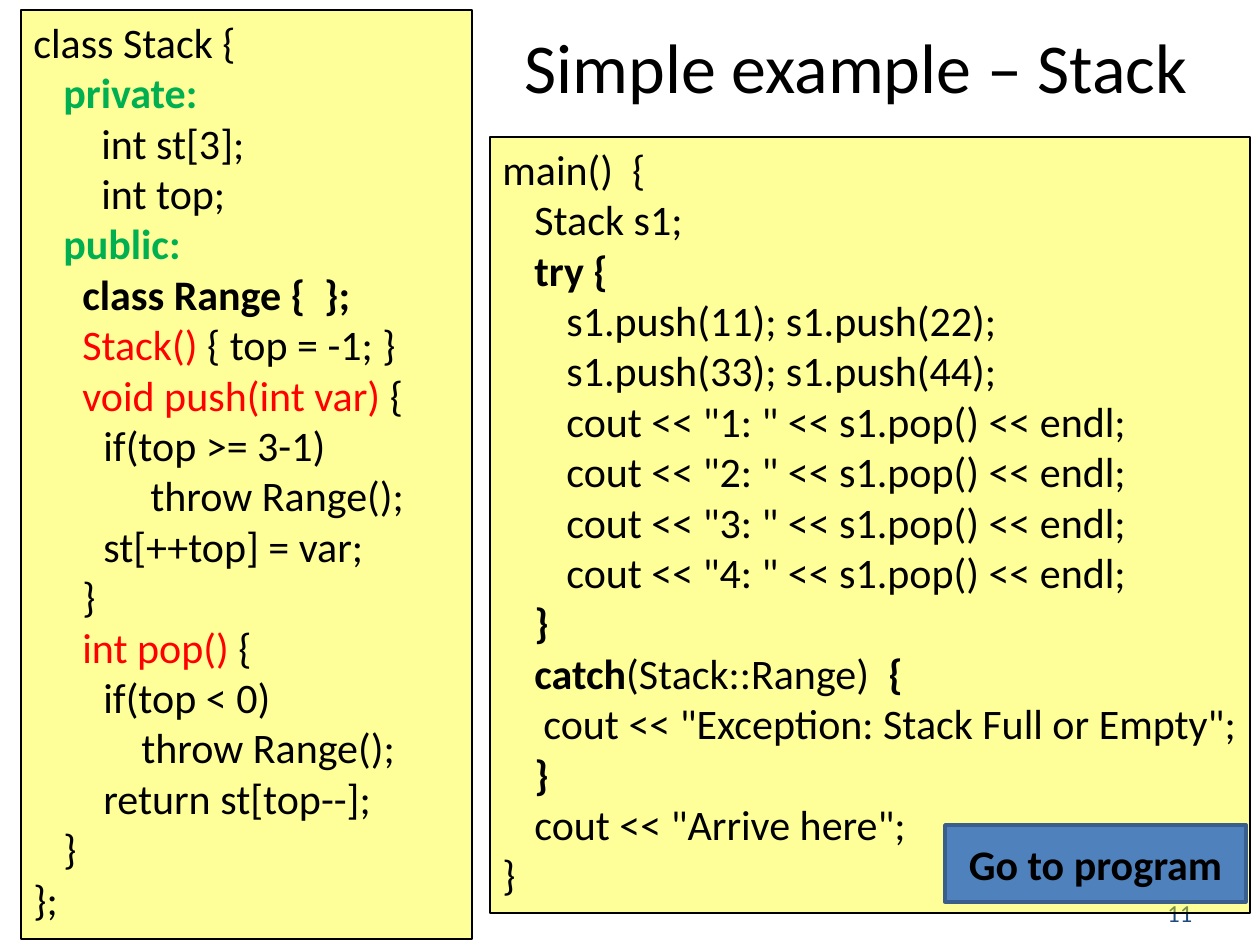
from dataclasses import dataclass

from lxml.etree import SubElement
from pptx import Presentation
from pptx.dml.color import RGBColor
from pptx.enum.shapes import MSO_SHAPE as Shape
from pptx.enum.text import MSO_ANCHOR as Anchor, MSO_AUTO_SIZE as AutoSize, PP_ALIGN as Align
from pptx.oxml.ns import qn
from pptx.util import Emu, Pt

PX_PER_INCH = 126


def px(n: int) -> Emu:
    return Emu(round(n * 914400 / PX_PER_INCH))


@dataclass(frozen=True)
class Theme:
    font: str = "Calibri"
    ink: str = "000000"
    access: str = "00B050"
    method: str = "FF0000"
    number: str = "1F497D"
    code_fill: str = "FFFF00"
    code_opacity: int = 40
    button_fill: str = "4F81BD"
    button_line: str = "3A5F8C"
    title_pt: int = 40
    body_pt: int = 24
    number_pt: int = 14


THEME = Theme()


@dataclass(frozen=True)
class Box:
    left: int
    top: int
    width: int
    height: int

    def emu(self) -> tuple:
        return px(self.left), px(self.top), px(self.width), px(self.height)


@dataclass(frozen=True)
class Run:
    text: str
    color: str = THEME.ink
    bold: bool = False


@dataclass(frozen=True)
class Line:
    indent: int
    runs: tuple


def line(indent: int, *runs) -> Line:
    """Make a line of code; a bare string is a plain run."""
    return Line(indent, tuple(Run(r) if isinstance(r, str) else r for r in runs))


def bold(text: str) -> Run:
    return Run(text, bold=True)


def access(text: str) -> Run:
    return Run(text, THEME.access, True)


def method(text: str) -> Run:
    return Run(text, THEME.method)


STACK_CLASS = (
    line(0, "class Stack {"),
    line(30, access("private:")),
    line(68, "int st[3];"),
    line(68, "int top;"),
    line(30, access("public:")),
    line(49, bold("class Range {  };")),
    line(49, method("Stack() "), "{ top = -1; }"),
    line(49, method("void push(int var)"), " {"),
    line(70, "if(top >= 3-1)"),
    line(117, "throw Range();"),
    line(70, "st[++top] = var;"),
    line(49, "}"),
    line(49, method("int pop() "), "{"),
    line(70, "if(top < 0)"),
    line(108, "throw Range();"),
    line(70, "return st[top--];"),
    line(30, "}"),
    line(0, "};"),
)

MAIN_PROGRAM = (
    line(0, "main()  {"),
    line(32, "Stack s1;"),
    line(32, bold("try {")),
    line(64, "s1.push(11); s1.push(22);"),
    line(64, "s1.push(33); s1.push(44);"),
    *(line(64, f'cout << "{n}: " << s1.pop() << endl;') for n in range(1, 5)),
    line(32, bold("}")),
    line(32, bold("catch"), "(Stack::Range)  ", bold("{")),
    line(41, 'cout << "Exception: Stack Full or Empty";'),
    line(32, bold("}")),
    line(32, 'cout << "Arrive here";'),
    line(0, "}"),
)


def write(sp, lines: tuple, size: int, align=Align.LEFT, anchor=Anchor.MIDDLE) -> None:
    tf = sp.text_frame
    tf.word_wrap = True
    tf.vertical_anchor = anchor
    for i, item in enumerate(lines):
        p = tf.add_paragraph() if i else tf.paragraphs[0]
        p.alignment = align
        if item.indent:
            p._p.get_or_add_pPr().set("marL", str(px(item.indent)))
        for run in item.runs:
            r = p.add_run()
            r.text = run.text
            r.font.name = THEME.font
            r.font.size = Pt(size)
            r.font.bold = run.bold
            r.font.color.rgb = RGBColor.from_string(run.color)


def add_label(slide, box: Box, run: Run, size: int, align=Align.LEFT) -> None:
    write(slide.shapes.add_textbox(*box.emu()), (line(0, run),), size, align)


def add_panel(slide, box: Box, fill: str, outline: str, width: float):
    sp = slide.shapes.add_shape(Shape.RECTANGLE, *box.emu())
    sp.shadow.inherit = False
    sp.fill.solid()
    sp.fill.fore_color.rgb = RGBColor.from_string(fill)
    sp.line.color.rgb = RGBColor.from_string(outline)
    sp.line.width = Pt(width)
    return sp


def add_code(slide, box: Box, lines: tuple) -> None:
    sp = add_panel(slide, box, THEME.code_fill, THEME.ink, 0.75)
    color = sp._element.spPr.find(qn("a:solidFill"))[0]
    SubElement(color, qn("a:alpha")).set("val", str(THEME.code_opacity * 1000))
    write(sp, lines, THEME.body_pt, anchor=Anchor.TOP)
    sp.text_frame.auto_size = AutoSize.SHAPE_TO_FIT_TEXT


def add_button(slide, box: Box, text: str) -> None:
    sp = add_panel(slide, box, THEME.button_fill, THEME.button_line, 2)
    write(sp, (line(0, bold(text)),), THEME.body_pt, Align.CENTER)


def main() -> None:
    prs = Presentation()
    prs.slide_width, prs.slide_height = px(1260), px(945)
    slide = prs.slides.add_slide(prs.slide_layouts[6])

    add_label(slide, Box(1155, 892, 85, 42), Run("11", THEME.number), THEME.number_pt)
    add_code(slide, Box(21, 10, 451, 929), STACK_CLASS)
    add_code(slide, Box(490, 137, 760, 776), MAIN_PROGRAM)
    add_label(slide, Box(483, 16, 746, 98), Run("Simple example – Stack"),
              THEME.title_pt, Align.CENTER)
    add_button(slide, Box(945, 825, 301, 77), "Go to program")

    prs.save("out.pptx")


if __name__ == "__main__":
    main()
